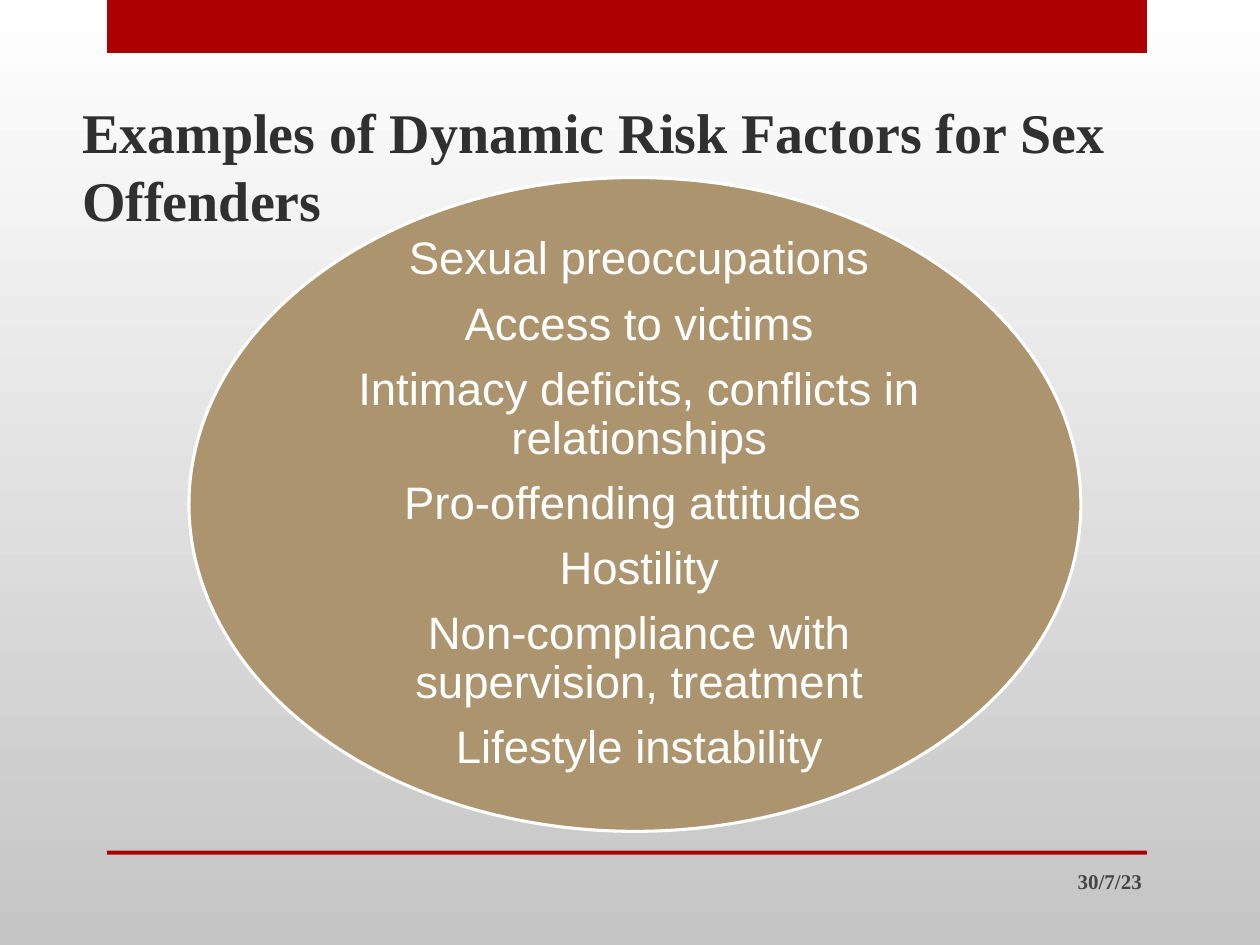
from dataclasses import dataclass

from pptx import Presentation
from pptx.dml.color import RGBColor
from pptx.enum.shapes import MSO_SHAPE
from pptx.enum.text import MSO_ANCHOR, PP_ALIGN
from pptx.util import Cm, Pt

RECTANGLE, OVAL = MSO_SHAPE.RECTANGLE, MSO_SHAPE.OVAL
LEFT, CENTER, RIGHT = PP_ALIGN.LEFT, PP_ALIGN.CENTER, PP_ALIGN.RIGHT
MIDDLE, BOTTOM = MSO_ANCHOR.MIDDLE, MSO_ANCHOR.BOTTOM


@dataclass(frozen=True)
class Theme:
    accent: str = "AD0101"
    oval: str = "AC956E"
    light: str = "FFFFFF"
    shade: str = "C5C5C5"
    title: str = "303030"
    date: str = "454545"
    serif: str = "Times New Roman"
    sans: str = "Arial"
    title_size: int = 32
    body_size: int = 26
    date_size: int = 12


theme = Theme()


def write_text(shape, lines, *, font, size, color, align, anchor, bold=False,
               inset=None, indent=None, line_spacing=None, space_after=0):
    frame = shape.text_frame
    frame.word_wrap = True
    frame.vertical_anchor = anchor
    if inset is not None:
        frame.margin_left = frame.margin_right = inset
        frame.margin_top = frame.margin_bottom = inset
    frame.text = "\n".join(lines)
    for paragraph in frame.paragraphs:
        paragraph.alignment = align
        paragraph.line_spacing = line_spacing
        paragraph.space_before = Pt(0)
        paragraph.space_after = Pt(space_after)
        if indent is not None:
            properties = paragraph._p.get_or_add_pPr()
            properties.set("marL", str(indent))
            properties.set("indent", "0")
        run_font = paragraph.runs[0].font
        run_font.name, run_font.size, run_font.bold = font, Pt(size), bold
        run_font.color.rgb = RGBColor.from_string(color)


def add_filled(shapes, kind, left, top, width, height, color):
    shape = shapes.add_shape(kind, Cm(left), Cm(top), Cm(width), Cm(height))
    shape.shadow.inherit = False
    shape.fill.solid()
    shape.fill.fore_color.rgb = RGBColor.from_string(color)
    shape.line.fill.background()
    return shape


presentation = Presentation()
presentation.slide_width, presentation.slide_height = Cm(25.4), Cm(19.05)
slide = presentation.slides.add_slide(presentation.slide_layouts[5])

# Background, fading downwards
background = slide.background.fill
background.gradient()
background.gradient_angle = 270
for stop, color in zip(background.gradient_stops, (theme.light, theme.shade)):
    stop.color.rgb = RGBColor.from_string(color)

# Top band and bottom rule
for top, height in ((0, 1.07), (17.15, 0.08)):
    add_filled(slide.shapes, RECTANGLE, 2.16, top, 20.96, height, theme.accent)

# Title
title = slide.shapes.title
title.left, title.top, title.width, title.height = Cm(1.4), Cm(0.36), Cm(22.3), Cm(4.45)
write_text(title, ["Examples of Dynamic Risk Factors for Sex Offenders"],
           font=theme.serif, size=theme.title_size, color=theme.title,
           align=LEFT, anchor=BOTTOM, bold=True)

# Oval with the risk factors
group = slide.shapes.add_group_shape()
oval = add_filled(group.shapes, OVAL, 3.81, 3.58, 17.98, 13.18, theme.oval)
oval.line.color.rgb = RGBColor.from_string(theme.light)
oval.line.width = Pt(1.75)
factors = [
    "Sexual preoccupations",
    "Access to victims",
    "Intimacy deficits, conflicts in relationships",
    "Pro-offending attitudes ",
    "Hostility",
    "Non-compliance with supervision, treatment",
    "Lifestyle instability",
]
factor_box = group.shapes.add_textbox(Cm(6.45), Cm(5.51), Cm(12.73), Cm(9.32))
write_text(factor_box, factors, font=theme.sans, size=theme.body_size,
           color=theme.light, align=CENTER, anchor=MIDDLE, inset=Cm(0.1),
           indent=Cm(0.15), line_spacing=0.9, space_after=0.35 * theme.body_size)

# Date
date_box = slide.shapes.add_textbox(Cm(17.35), Cm(17.25), Cm(5.92), Cm(1.02))
write_text(date_box, ["30/7/23"], font=theme.serif, size=theme.date_size,
           color=theme.date, align=RIGHT, anchor=MIDDLE, bold=True)

presentation.save("out.pptx")
